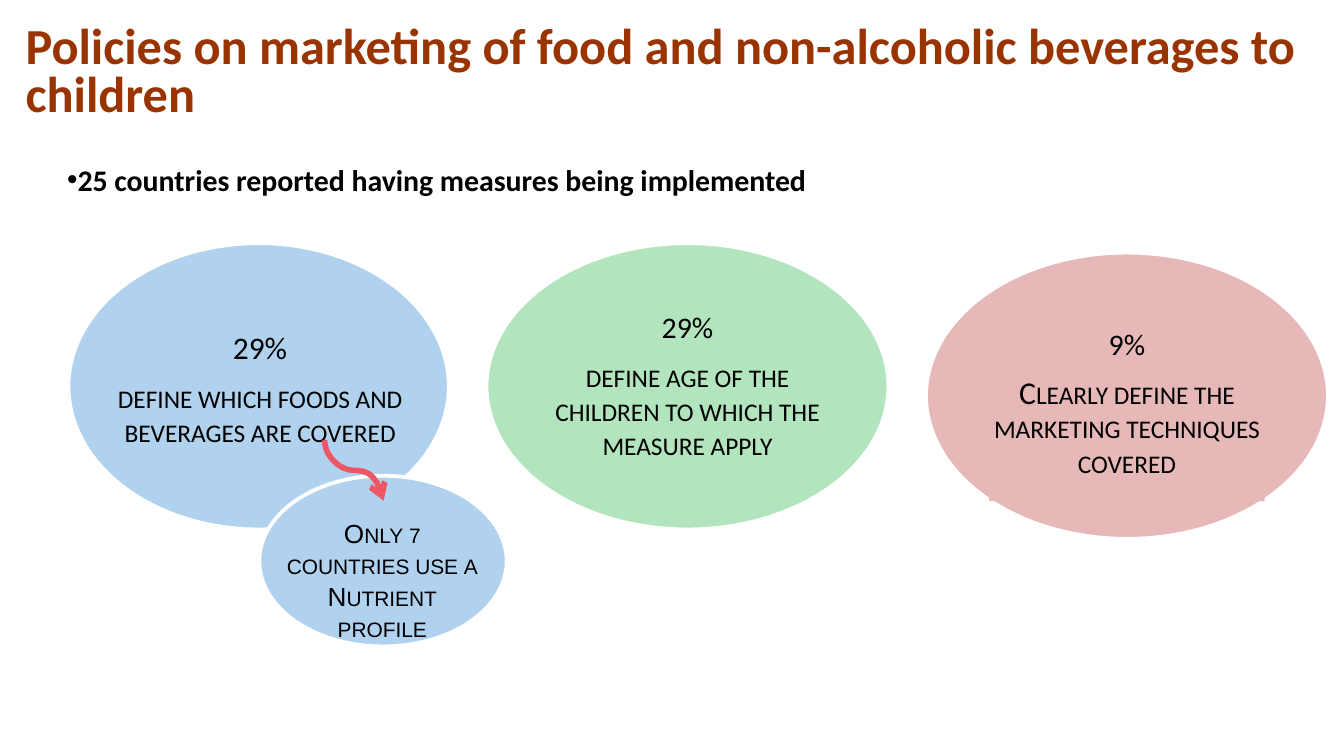
from dataclasses import dataclass
from typing import Optional

from lxml.etree import SubElement
from pptx import Presentation
from pptx.dml.color import RGBColor
from pptx.enum.shapes import MSO_CONNECTOR, MSO_SHAPE
from pptx.enum.text import MSO_ANCHOR, MSO_AUTO_SIZE, PP_ALIGN
from pptx.oxml.ns import qn
from pptx.util import Inches, Pt

BLACK = RGBColor(0x00, 0x00, 0x00)
WHITE = RGBColor(0xFF, 0xFF, 0xFF)
BROWN = RGBColor(0x99, 0x33, 0x00)
BLUE = RGBColor(0xB0, 0xD2, 0xEF)
GREEN = RGBColor(0xB2, 0xE5, 0xBD)
PINK = RGBColor(0xE6, 0xB9, 0xB8)
RED = RGBColor(0xED, 0x57, 0x65)


@dataclass
class Box:
    left: float
    top: float
    width: float
    height: float

    def emu(self) -> tuple:
        return tuple(Inches(v) for v in (self.left, self.top, self.width, self.height))


@dataclass
class Finding:
    oval: Box
    label: Box
    color: RGBColor
    share: str
    share_size: int
    text: str
    label_fill: Optional[RGBColor] = None


FINDINGS = [
    Finding(Box(0.51, 1.81, 2.83, 2.13), Box(0.82, 2.07, 2.23, 1.63), BLUE,
            "29%", 21, "define which foods and beverages are covered"),
    Finding(Box(3.62, 1.81, 2.99, 2.13), Box(4.09, 2.12, 2.05, 1.48), GREEN,
            "29%", 20, "define age of the children to which the measure apply", GREEN),
    Finding(Box(6.89, 1.88, 2.99, 2.13), Box(7.36, 2.25, 2.05, 1.48), PINK,
            "9%", 20, "Clearly define the marketing techniques covered", PINK),
]


def set_frame(tf, anchor: MSO_ANCHOR, side: float, edge: float) -> None:
    tf.word_wrap = True
    tf.auto_size = MSO_AUTO_SIZE.NONE
    tf.vertical_anchor = anchor
    tf.margin_left = tf.margin_right = Inches(side)
    tf.margin_top = tf.margin_bottom = Inches(edge)


def add_run(p, text: str, size: int, color: RGBColor = BLACK, font: str = "Calibri",
            bold: bool = False, small_caps: bool = False) -> None:
    r = p.add_run()
    r.text = text
    r.font.name = font
    r.font.size = Pt(size)
    r.font.bold = bold
    r.font.color.rgb = color
    if small_caps:
        r.font._element.set("cap", "small")


def add_oval(slide, box: Box, color: RGBColor) -> None:
    sp = slide.shapes.add_shape(MSO_SHAPE.OVAL, *box.emu())
    sp.shadow.inherit = False
    sp.fill.solid()
    sp.fill.fore_color.rgb = color
    sp.line.color.rgb = WHITE
    sp.line.width = Pt(2)


def add_finding(slide, finding: Finding) -> None:
    add_oval(slide, finding.oval, finding.color)
    sp = slide.shapes.add_textbox(*finding.label.emu())
    if finding.label_fill is not None:
        sp.fill.solid()
        sp.fill.fore_color.rgb = finding.label_fill
    tf = sp.text_frame
    set_frame(tf, MSO_ANCHOR.MIDDLE, 0, 0)
    lines = [(finding.share, finding.share_size), (finding.text, 17)]
    for i, (text, size) in enumerate(lines):
        p = tf.add_paragraph() if i else tf.paragraphs[0]
        p.alignment = PP_ALIGN.CENTER
        p.line_spacing = 0.9
        p.space_after = Pt(7)
        add_run(p, text, size, small_caps=True)


def add_curved_arrow(slide, box: Box) -> None:
    cx = slide.shapes.add_connector(
        MSO_CONNECTOR.CURVE, Inches(box.left), Inches(box.top),
        Inches(box.left + box.width), Inches(box.top + box.height))
    cx.line.color.rgb = RED
    cx.line.width = Pt(3)
    spPr = cx._element.spPr
    xfrm = spPr.find(qn("a:xfrm"))
    xfrm.set("rot", str(270 * 60000))
    xfrm.set("flipH", "1")
    SubElement(spPr.find(qn("a:ln")), qn("a:tailEnd"), type="arrow")
    SubElement(spPr, qn("a:effectLst"))


def place(sp, box: Box) -> None:
    sp.left, sp.top, sp.width, sp.height = box.emu()
    set_frame(sp.text_frame, MSO_ANCHOR.TOP, 0.07, 0.04)


def main() -> None:
    prs = Presentation()
    prs.slide_width = Inches(10)
    prs.slide_height = prs.slide_width * 9 // 16
    slide = prs.slides.add_slide(prs.slide_layouts[1])

    title = slide.shapes.title
    place(title, Box(0.12, 0.15, 9.76, 0.81))
    p = title.text_frame.paragraphs[0]
    p.alignment = PP_ALIGN.LEFT
    p.line_spacing = 0.8
    add_run(p, "Policies on marketing of food and non-alcoholic beverages to children",
            27, BROWN, bold=True)

    body = slide.placeholders[1]
    place(body, Box(0.43, 1.16, 9.37, 0.35))
    p = body.text_frame.paragraphs[0]
    p.space_before = Pt(0)
    pPr = p._p.get_or_add_pPr()
    pPr.set("marL", "0")
    pPr.set("indent", str(Inches(-0.23)))
    SubElement(pPr, qn("a:buChar"), char="•")
    add_run(p, "25 countries reported having measures being implemented", 16, bold=True)

    for finding in FINDINGS:
        add_finding(slide, finding)

    add_oval(slide, Box(1.93, 3.54, 1.84, 1.27), BLUE)
    add_curved_arrow(slide, Box(2.41, 3.28, 0.45, 0.44))
    label = slide.shapes.add_textbox(*Box(2.03, 3.81, 1.63, 1.04).emu())
    set_frame(label.text_frame, MSO_ANCHOR.TOP, 0.07, 0.04)
    p = label.text_frame.paragraphs[0]
    p.alignment = PP_ALIGN.CENTER
    add_run(p, "Only 7 countries use a Nutrient profile", 14, font="Arial", small_caps=True)

    prs.save("out.pptx")


if __name__ == "__main__":
    main()
